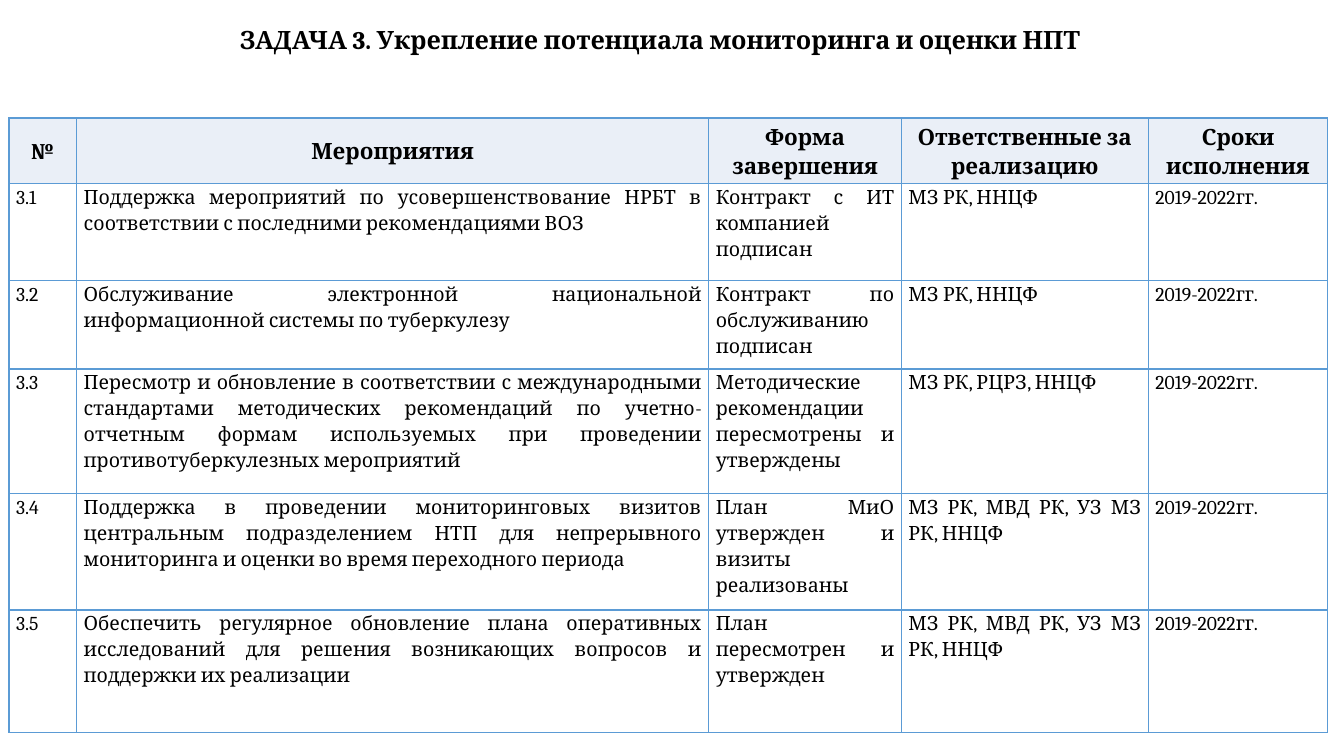
from dataclasses import dataclass

from lxml import etree
from pptx import Presentation
from pptx.dml.color import RGBColor
from pptx.enum.text import MSO_ANCHOR, MSO_AUTO_SIZE, PP_ALIGN
from pptx.oxml.ns import qn
from pptx.util import Inches, Pt

CENTER, JUSTIFY = PP_ALIGN.CENTER, PP_ALIGN.JUSTIFY
TOP, MIDDLE = MSO_ANCHOR.TOP, MSO_ANCHOR.MIDDLE
FIT_SHAPE = MSO_AUTO_SIZE.SHAPE_TO_FIT_TEXT

FONT = "Cambria"
BLACK, HEADER_FILL, BORDER = "000000", "EAEFF7", "5B9BD5"
COLUMN_WIDTHS = [0.67, 6.27, 1.91, 2.45, 1.78]
ROW_HEIGHTS = [0.65, 0.96, 0.88, 1.24, 1.15, 1.22]
TERM = "2019-2022гг."
HEADINGS = ["№", "Мероприятия", "Форма завершения",
            "Ответственные за реализацию", "Сроки исполнения"]


@dataclass
class Activity:
    name: str
    result: str
    responsible: str


ACTIVITIES = [
    Activity("Поддержка мероприятий по усовершенствование НРБТ в соответствии "
             "с последними рекомендациями ВОЗ",
             "Контракт с ИТ компанией подписан", "МЗ РК, ННЦФ"),
    Activity("Обслуживание электронной национальной информационной системы "
             "по туберкулезу",
             "Контракт по обслуживанию подписан", "МЗ РК, ННЦФ"),
    Activity("Пересмотр и обновление в соответствии с международными стандартами "
             "методических рекомендаций по учетно-отчетным формам используемых "
             "при проведении противотуберкулезных мероприятий",
             "Методические рекомендации пересмотрены и утверждены",
             "МЗ РК, РЦРЗ, ННЦФ"),
    Activity("Поддержка в проведении мониторинговых визитов центральным "
             "подразделением НТП для непрерывного мониторинга и оценки "
             "во время переходного периода",
             "План МиО утвержден и визиты реализованы",
             "МЗ РК, МВД РК, УЗ МЗ РК, ННЦФ"),
    Activity("Обеспечить регулярное обновление плана оперативных исследований "
             "для решения возникающих вопросов и поддержки их реализации",
             "План пересмотрен и утвержден", "МЗ РК, МВД РК, УЗ МЗ РК, ННЦФ"),
]


def color(value: str) -> RGBColor:
    return RGBColor.from_string(value)


def write(frame, text: str, *, size: float, bold: bool = False, align=CENTER,
          line_spacing: float = 1.0, space_after: float = 0) -> None:
    para = frame.paragraphs[0]
    para.alignment = align
    para.line_spacing = line_spacing
    para.space_after = Pt(space_after)
    span = para.add_run()
    span.text = text
    span.font.name = FONT
    span.font.size = Pt(size)
    span.font.bold = bold
    span.font.color.rgb = color(BLACK)


def set_borders(cell, top_width: float) -> None:
    properties = cell._tc.get_or_add_tcPr()
    for side in "LRTB":
        width = top_width if side == "T" else 1
        line = etree.SubElement(properties, qn(f"a:ln{side}"), w=str(Pt(width)))
        fill = etree.SubElement(line, qn("a:solidFill"))
        etree.SubElement(fill, qn("a:srgbClr"), val=BORDER)


def fill_cell(cell, text: str, *, header: bool, top_width: float) -> None:
    cell.margin_left = cell.margin_right = Inches(0.07)
    cell.margin_top = cell.margin_bottom = 0
    set_borders(cell, top_width)
    if header:
        cell.vertical_anchor = MIDDLE
        cell.fill.solid()
        cell.fill.fore_color.rgb = color(HEADER_FILL)
        write(cell.text_frame, text, size=16, bold=True, line_spacing=1.15)
    else:
        cell.vertical_anchor = TOP
        cell.fill.background()
        write(cell.text_frame, text, size=14, align=JUSTIFY,
              line_spacing=1.15, space_after=10)


def add_title(slide, text: str) -> None:
    box = slide.shapes.add_textbox(Inches(0.35), Inches(0.19), Inches(12.4), Inches(0.4))
    box.text_frame.word_wrap = True
    box.text_frame.auto_size = FIT_SHAPE
    write(box.text_frame, text, size=18, bold=True)


def add_plan(slide) -> None:
    rows = [HEADINGS] + [
        [f"3.{number}", activity.name, activity.result, activity.responsible, TERM]
        for number, activity in enumerate(ACTIVITIES, 1)
    ]
    table = slide.shapes.add_table(
        len(rows), len(HEADINGS), Inches(0.09), Inches(1.17),
        Inches(sum(COLUMN_WIDTHS)), Inches(sum(ROW_HEIGHTS))).table
    table.first_row = table.horz_banding = False
    for column, width in zip(table.columns, COLUMN_WIDTHS):
        column.width = Inches(width)
    for index, (row, height, texts) in enumerate(zip(table.rows, ROW_HEIGHTS, rows)):
        row.height = Inches(height)
        top_width = 2 if index == len(rows) - 1 else 1
        for cell, text in zip(row.cells, texts):
            fill_cell(cell, text, header=index == 0, top_width=top_width)


def main() -> None:
    deck = Presentation()
    deck.slide_width, deck.slide_height = Inches(13.33), Inches(7.5)
    slide = deck.slides.add_slide(deck.slide_layouts[6])
    add_title(slide, "ЗАДАЧА 3. Укрепление потенциала мониторинга и оценки НПТ")
    add_plan(slide)
    deck.save("out.pptx")


if __name__ == "__main__":
    main()
